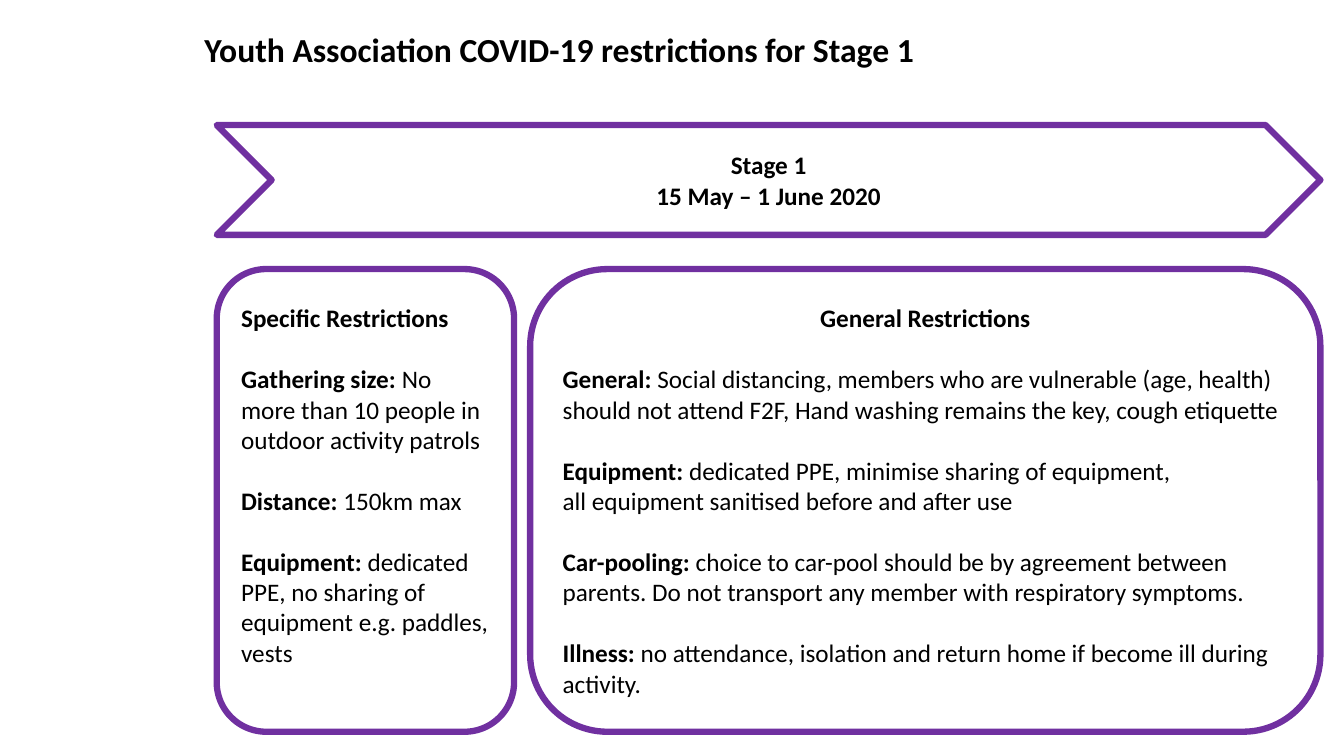
from pptx import Presentation
from pptx.dml.color import RGBColor
from pptx.enum.shapes import MSO_SHAPE
from pptx.enum.text import MSO_ANCHOR, PP_ALIGN
from pptx.util import Pt

# Content: each paragraph is (bold lead, plain text, starts a new block)
TITLE = [("Youth Association COVID-19 restrictions for Stage 1", "", False)]
STAGE = [("Stage 1", "", False), ("15 May – 1 June 2020", "", False)]
SPECIFIC = [
    ("Specific Restrictions", "", False),
    ("Gathering size:", " No more than 10 people in outdoor activity patrols", True),
    ("Distance: ", "150km max", True),
    ("Equipment: ", "dedicated PPE, no sharing of equipment e.g. paddles, vests", True),
]
GENERAL = [
    ("General Restrictions", "", False),
    ("General: ", "Social distancing, members who are vulnerable (age, health) "
     "should not attend F2F, Hand washing remains the key, cough etiquette", True),
    ("Equipment: ", "dedicated PPE, minimise sharing of equipment,", True),
    ("", "all equipment sanitised before and after use", False),
    ("Car-pooling: ", "choice to car-pool should be by agreement between parents. "
     "Do not transport any member with respiratory symptoms.", True),
    ("Illness: ", "no attendance, isolation and return home if become ill "
     "during activity.", True),
]

# Layout in points
LEFT, RIGHT = 154.8, 943.2
STAGE_TOP, STAGE_HEIGHT = 89.3, 78.5
BOX_TOP, BOX_HEIGHT = 192.2, 330.5
SPECIFIC_WIDTH, GAP = 212.4, 11.5
LINE_HEIGHT = 22
INSET = 3.6
PURPLE, WHITE, BLACK = "7030A0", "FFFFFF", "000000"


def color(value):
    return RGBColor.from_string(value)


def write(frame, paragraphs, size=18, centered=0):
    """Fill a frame; the first `centered` paragraphs are centred."""
    frame.word_wrap = True
    for index, (lead, body, new_block) in enumerate(paragraphs):
        paragraph = frame.add_paragraph() if index else frame.paragraphs[0]
        paragraph.alignment = PP_ALIGN.CENTER if index < centered else PP_ALIGN.LEFT
        if new_block:
            paragraph.space_before = Pt(LINE_HEIGHT)
        for text, bold in ((lead, True), (body, False)):
            if text:
                run = paragraph.add_run()
                run.text = text
                run.font.name = "Calibri"
                run.font.size = Pt(size)
                run.font.bold = bold
                run.font.color.rgb = color(BLACK)


def add_panel(kind, left, top, width, height, paragraphs, centered=0, bottom=INSET):
    panel = slide.shapes.add_shape(kind, Pt(left), Pt(top), Pt(width), Pt(height))
    panel.shadow.inherit = False
    panel.fill.solid()
    panel.fill.fore_color.rgb = color(WHITE)
    panel.line.color.rgb = color(PURPLE)
    panel.line.width = Pt(4.5)
    panel.text_frame.vertical_anchor = MSO_ANCHOR.MIDDLE
    panel.text_frame.margin_bottom = Pt(bottom)
    write(panel.text_frame, paragraphs, centered=centered)


presentation = Presentation()
presentation.slide_width, presentation.slide_height = Pt(960), Pt(540)
slide = presentation.slides.add_slide(presentation.slide_layouts[6])

# Restriction boxes: the left one keeps a line free below so headings align
general_left = LEFT + SPECIFIC_WIDTH + GAP
add_panel(MSO_SHAPE.ROUNDED_RECTANGLE, LEFT, BOX_TOP, SPECIFIC_WIDTH, BOX_HEIGHT,
          SPECIFIC, bottom=INSET + LINE_HEIGHT)
add_panel(MSO_SHAPE.ROUNDED_RECTANGLE, general_left, BOX_TOP, RIGHT - general_left,
          BOX_HEIGHT, GENERAL, centered=1)

# Stage arrow
add_panel(MSO_SHAPE.CHEVRON, LEFT, STAGE_TOP, RIGHT - LEFT, STAGE_HEIGHT,
          STAGE, centered=2)

# Title
title = slide.shapes.add_textbox(Pt(139), Pt(17.3), Pt(773.3), Pt(36))
write(title.text_frame, TITLE, size=24)

presentation.save("out.pptx")
